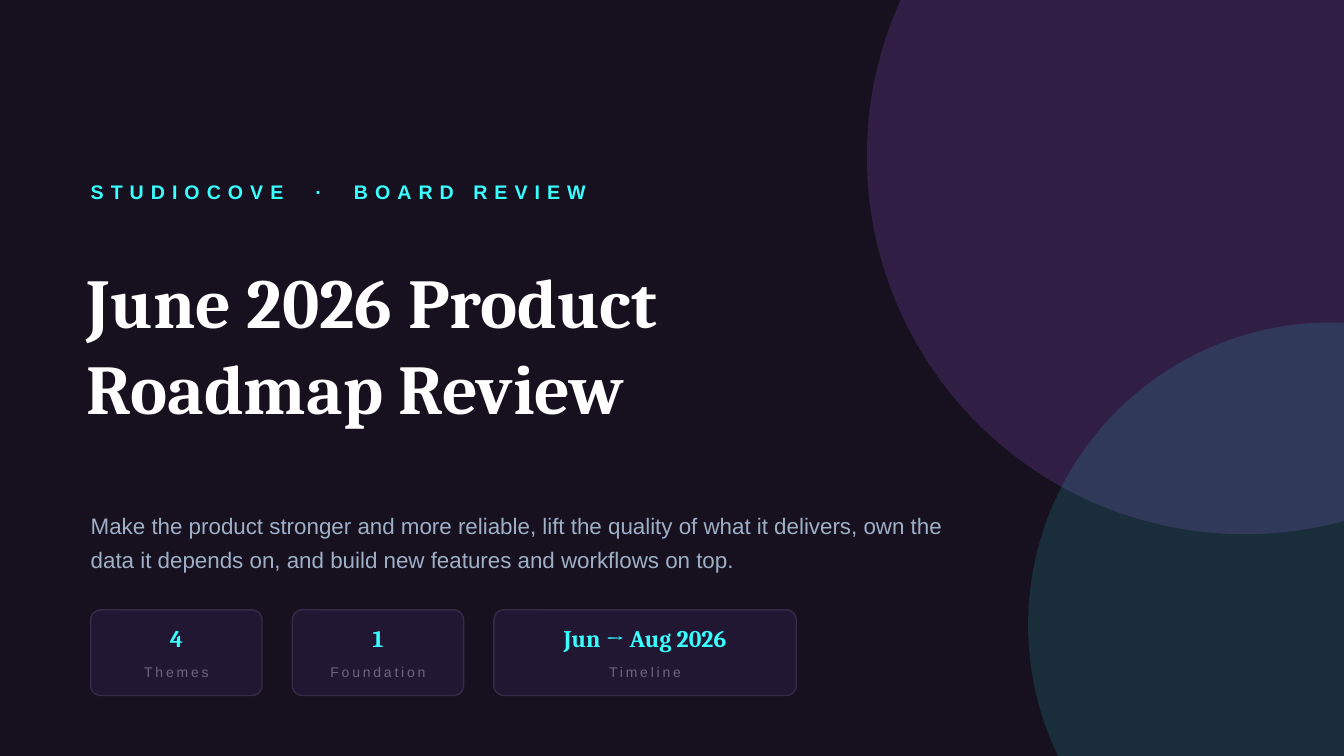
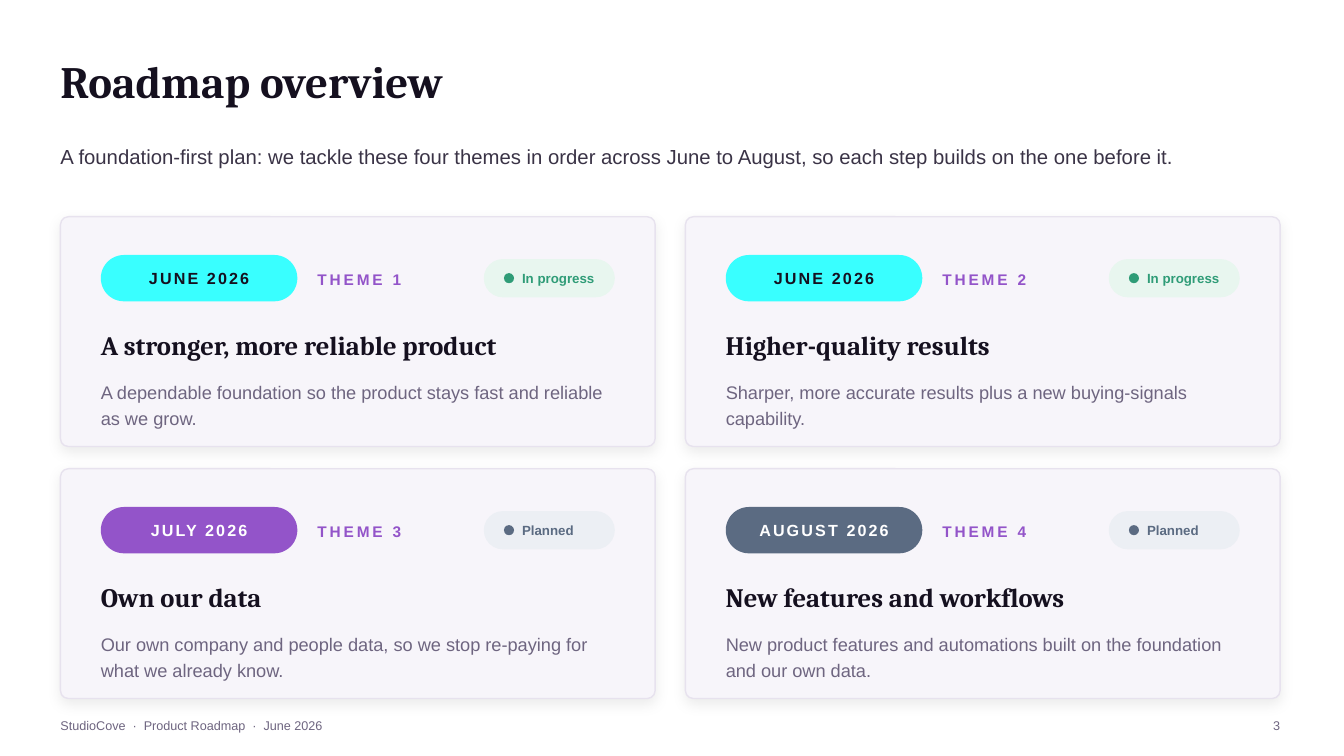
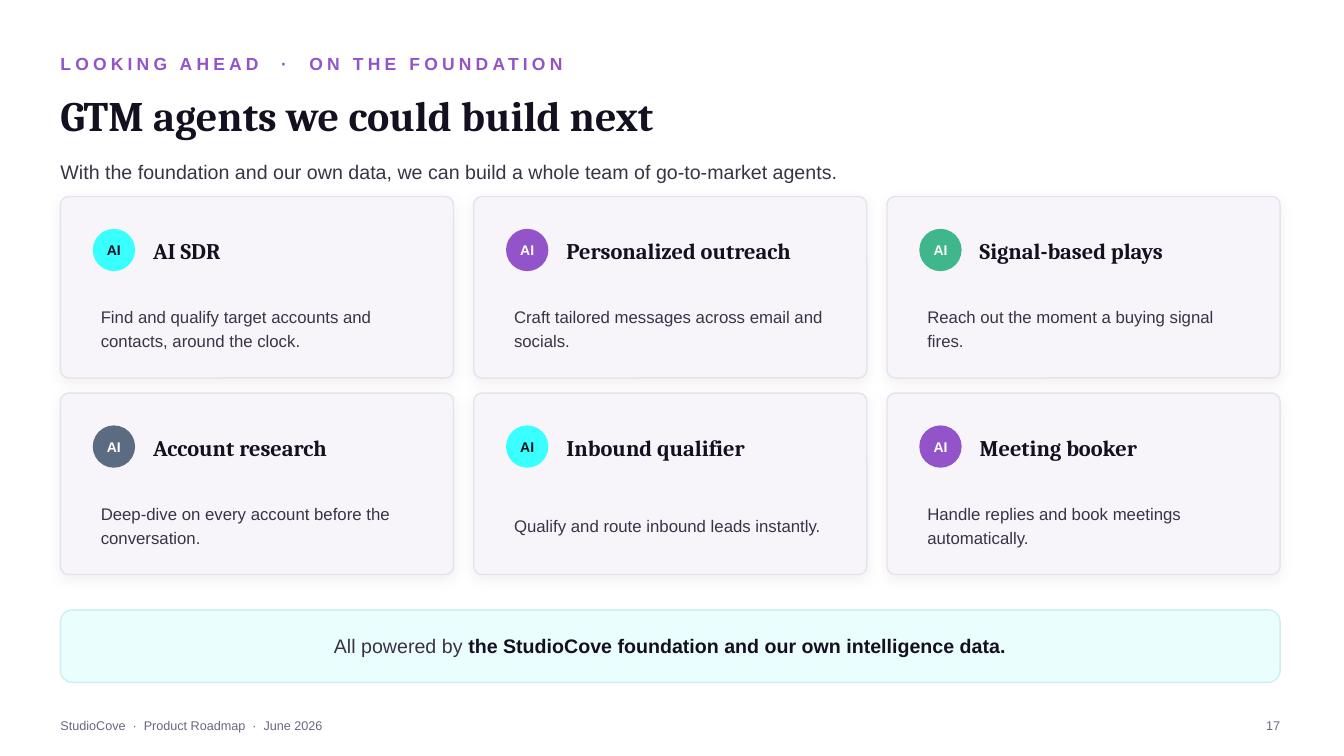
"""Build three slides of a product roadmap review."""
from dataclasses import dataclass, replace

from lxml.etree import SubElement
from pptx import Presentation
from pptx.dml.color import RGBColor
from pptx.enum.shapes import MSO_SHAPE as Preset
from pptx.enum.text import MSO_ANCHOR as Anchor, MSO_AUTO_SIZE as AutoSize, PP_ALIGN as Align
from pptx.oxml.ns import qn
from pptx.util import Pt

NIGHT = RGBColor(0x16, 0x10, 0x1F)
INK = RGBColor(0x15, 0x10, 0x1F)
TEXT = RGBColor(0x3A, 0x33, 0x46)
MUTED = RGBColor(0x6E, 0x65, 0x80)
WHITE = RGBColor(0xFF, 0xFF, 0xFF)
CYAN = RGBColor(0x39, 0xFF, 0xFF)
PURPLE = RGBColor(0x93, 0x54, 0xC9)
SLATE = RGBColor(0x5B, 0x6B, 0x82)
GREEN = RGBColor(0x3F, 0xB6, 0x8B)
DEEP_GREEN = RGBColor(0x2F, 0x9C, 0x77)
PALE_GREEN = RGBColor(0xE8, 0xF6, 0xEF)
PALE_SLATE = RGBColor(0xEC, 0xEF, 0xF4)
MIST = RGBColor(0x9F, 0xB0, 0xC6)
CARD = RGBColor(0xF7, 0xF5, 0xFA)
CARD_EDGE = RGBColor(0xE7, 0xE2, 0xEE)
DARK_CARD = RGBColor(0x21, 0x17, 0x33)
DARK_EDGE = RGBColor(0x35, 0x2A, 0x48)
BANNER = RGBColor(0xEA, 0xFE, 0xFE)
BANNER_EDGE = RGBColor(0xCD, 0xEF, 0xEF)

MARGIN = 43.2
CONTENT_WIDTH = 871.2
COVER_LEFT = 64.8


@dataclass(frozen=True)
class Style:
    """Look of a paragraph."""
    size: float
    color: RGBColor
    font: str = "Arial"
    bold: bool = False
    spacing: float = 0
    align: Align = Align.LEFT
    line: float = 1.0


HEADING = Style(32, INK, "Cambria", True)
FOOTER_STYLE = Style(9, MUTED)
FOOTER = ("StudioCove", "Product Roadmap", "June 2026")

COVER_EYEBROW = ("STUDIOCOVE", "BOARD REVIEW")
COVER_TITLE = ("June 2026 Product", "Roadmap Review")
COVER_SUMMARY = ("Make the product stronger and more reliable, lift the quality of what it delivers, "
                 "own the data it depends on, and build new features and workflows on top.")
COVER_CIRCLES = [((619.2, -158.4, 540, 540), PURPLE, 22), ((734.4, 230.4, 432, 432), CYAN, 12)]
COVER_FACTS = [("4", "Themes", 122.4), ("1", "Foundation", 122.4),
               ("Jun → Aug 2026", "Timeline", 216)]

OVERVIEW_LEAD = ("A foundation-first plan: we tackle these four themes in order across June to August, "
                 "so each step builds on the one before it.")
IN_PROGRESS = ("In progress", DEEP_GREEN, PALE_GREEN)
PLANNED = ("Planned", SLATE, PALE_SLATE)
THEMES = [
    ("JUNE 2026", CYAN, IN_PROGRESS, "A stronger, more reliable product",
     "A dependable foundation so the product stays fast and reliable as we grow."),
    ("JUNE 2026", CYAN, IN_PROGRESS, "Higher-quality results",
     "Sharper, more accurate results plus a new buying-signals capability."),
    ("JULY 2026", PURPLE, PLANNED, "Own our data",
     "Our own company and people data, so we stop re-paying for what we already know."),
    ("AUGUST 2026", SLATE, PLANNED, "New features and workflows",
     "New product features and automations built on the foundation and our own data."),
]

AGENTS_EYEBROW = ("LOOKING AHEAD", "ON THE FOUNDATION")
AGENTS_LEAD = "With the foundation and our own data, we can build a whole team of go-to-market agents."
AGENTS = [
    ("AI SDR", CYAN, "Find and qualify target accounts and contacts, around the clock."),
    ("Personalized outreach", PURPLE, "Craft tailored messages across email and socials."),
    ("Signal-based plays", GREEN, "Reach out the moment a buying signal fires."),
    ("Account research", SLATE, "Deep-dive on every account before the conversation."),
    ("Inbound qualifier", CYAN, "Qualify and route inbound leads instantly."),
    ("Meeting booker", PURPLE, "Handle replies and book meetings automatically."),
]
BANNER_TEXT = ("All powered by ", "the StudioCove foundation and our own intelligence data.")


def paint(font, style):
    font.size = Pt(style.size)
    font.name = style.font
    font.bold = style.bold
    font.color.rgb = style.color
    if style.spacing:
        font._rPr.set("spc", str(round(style.spacing * 100)))


def write(shape, lines, style, inset=0):
    """Fill a shape; each line is a string or a list of (text, style) runs."""
    frame = shape.text_frame
    frame.word_wrap = True
    frame.auto_size = AutoSize.NONE
    frame.vertical_anchor = Anchor.MIDDLE
    frame.margin_left = Pt(inset)
    frame.margin_top = frame.margin_right = frame.margin_bottom = 0
    for index, line in enumerate(lines):
        paragraph = frame.add_paragraph() if index else frame.paragraphs[0]
        paragraph.alignment = style.align
        paragraph.line_spacing = style.line
        paragraph.space_before = Pt(0)
        if isinstance(line, str):
            paragraph.text = line
            paint(paragraph.font, style)
            continue
        for text, run_style in line:
            run = paragraph.add_run()
            run.text = text
            paint(run.font, run_style)


def place(shape, box):
    shape.left, shape.top, shape.width, shape.height = map(Pt, box)


def add_text(slide, box, line, style):
    write(slide.shapes.add_textbox(*map(Pt, box)), [line], style)


def fill_placeholder(shape, box, lines, style):
    place(shape, box)
    write(shape, lines, style)


def dotted(parts, style):
    """Join parts with a dot that has wide gaps around it."""
    gap = replace(style, spacing=2 * style.spacing + 0.28 * style.size)
    runs = [(parts[0], style)]
    for part in parts[1:]:
        runs += [(" ", gap), ("·", style), (" ", gap), (part, style)]
    return runs


def add_shape(slide, preset, box, fill, edge=None, corner=None, alpha=None, shadow=None):
    shape = slide.shapes.add_shape(preset, *map(Pt, box))
    shape.shadow.inherit = False
    shape.fill.solid()
    shape.fill.fore_color.rgb = fill
    properties = shape._element.spPr
    if alpha:
        color = properties.find(".//" + qn("a:srgbClr"))
        SubElement(color, qn("a:alpha"), val=str(alpha * 1000))
    if edge:
        shape.line.color.rgb = edge
        shape.line.width = Pt(1)
    else:
        shape.line.fill.background()
    if corner:
        shape.adjustments[0] = corner
    if shadow:
        outer = SubElement(properties.find(qn("a:effectLst")), qn("a:outerShdw"),
                           blurRad=str(Pt(10)), dist=str(Pt(3)), dir="5400000",
                           algn="bl", rotWithShape="0")
        color = SubElement(outer, qn("a:srgbClr"), val="000000")
        SubElement(color, qn("a:alpha"), val=str(shadow * 1000))
    return shape


def grid(count, columns, top, width, height, gap_x, gap_y):
    for index in range(count):
        row, column = divmod(index, columns)
        yield MARGIN + column * (width + gap_x), top + row * (height + gap_y), width, height


def on_color(fill):
    return INK if fill == CYAN else WHITE


def add_content_slide(presentation, title, title_box, title_size, number):
    slide = presentation.slides.add_slide(presentation.slide_layouts[5])
    fill_placeholder(slide.shapes.title, title_box, [title], replace(HEADING, size=title_size))
    add_text(slide, (MARGIN, 507.6, 576, 21.6), dotted(FOOTER, FOOTER_STYLE), FOOTER_STYLE)
    add_text(slide, (885.6, 507.6, 28.8, 21.6), number, replace(FOOTER_STYLE, align=Align.RIGHT))
    return slide


def build_cover(presentation):
    slide = presentation.slides.add_slide(presentation.slide_layouts[0])
    slide.background.fill.solid()
    slide.background.fill.fore_color.rgb = NIGHT
    for box, color, alpha in COVER_CIRCLES:
        add_shape(slide, Preset.OVAL, box, color, alpha=alpha)
    eyebrow = Style(14, CYAN, bold=True, spacing=5)
    add_text(slide, (COVER_LEFT, 122.4, 648, 28.8), dotted(COVER_EYEBROW, eyebrow), eyebrow)
    fill_placeholder(slide.shapes.title, (61.92, 169.2, 756, 151.2), COVER_TITLE,
                     Style(50, WHITE, "Cambria", True, line=1.02))
    fill_placeholder(slide.placeholders[1], (COVER_LEFT, 349.2, 619.2, 72), [COVER_SUMMARY],
                     Style(16, MIST, line=1.25))
    left, top = COVER_LEFT, 435.6
    for value, label, width in COVER_FACTS:
        add_shape(slide, Preset.ROUNDED_RECTANGLE, (left, top, width, 61.2), DARK_CARD,
                  DARK_EDGE, 0.118)
        add_text(slide, (left, top + 5.76, width, 28.8), value,
                 Style(17, CYAN, "Cambria", True, align=Align.CENTER))
        add_text(slide, (left, top + 33.84, width, 21.6), label,
                 Style(10, MUTED, spacing=2, align=Align.CENTER))
        left += width + 21.6


def build_overview(presentation):
    slide = add_content_slide(presentation, "Roadmap overview", (MARGIN, 36, 792, 43.2), 32, "3")
    add_text(slide, (MARGIN, 84.96, CONTENT_WIDTH, 50.4), OVERVIEW_LEAD, Style(14.5, TEXT, line=1.2))
    cards = grid(len(THEMES), 2, 154.8, 424.8, 164.16, 21.6, 15.84)
    for number, (card, theme) in enumerate(zip(cards, THEMES), 1):
        month, color, (status, status_color, status_fill), heading, body = theme
        left, top = card[:2]
        inner = left + 28.8
        add_shape(slide, Preset.ROUNDED_RECTANGLE, card, CARD, CARD_EDGE, 0.035, shadow=8)
        pill = add_shape(slide, Preset.ROUNDED_RECTANGLE, (inner, top + 27.36, 140.4, 33.12),
                         color, corner=0.5)
        write(pill, [month], Style(11.5, on_color(color), bold=True, spacing=1.5,
                                   align=Align.CENTER))
        add_text(slide, (left + 183.6, top + 33.12, 100.8, 23.04), f"THEME {number}",
                 Style(11, PURPLE, bold=True, spacing=2))
        badge = add_shape(slide, Preset.ROUNDED_RECTANGLE,
                          (left + 302.4, top + 30.24, 93.6, 27.36), status_fill, corner=0.5)
        write(badge, [status], Style(9.5, status_color, bold=True), inset=23.35)
        add_shape(slide, Preset.OVAL, (left + 316.8, top + 40.32, 7.2, 7.2), status_color)
        add_text(slide, (inner, top + 73.44, 367.2, 36), heading, replace(HEADING, size=19))
        add_text(slide, (inner, top + 111.6, 370.8, 43.2), body, Style(13, MUTED, line=1.2))


def build_agents(presentation):
    slide = add_content_slide(presentation, "GTM agents we could build next",
                              (MARGIN, 60.48, CONTENT_WIDTH, 43.2), 30, "17")
    eyebrow = Style(12.5, PURPLE, bold=True, spacing=3)
    add_text(slide, (MARGIN, 33.12, 792, 25.2), dotted(AGENTS_EYEBROW, eyebrow), eyebrow)
    add_text(slide, (MARGIN, 108, CONTENT_WIDTH, 28.8), AGENTS_LEAD, Style(14, TEXT))
    cards = grid(len(AGENTS), 3, 140.4, 280.8, 129.6, 14.4, 10.8)
    for card, (name, color, description) in zip(cards, AGENTS):
        left, top = card[:2]
        add_shape(slide, Preset.ROUNDED_RECTANGLE, card, CARD, CARD_EDGE, 0.044, shadow=6)
        badge = add_shape(slide, Preset.OVAL, (left + 23.04, top + 23.04, 30.24, 30.24), color)
        write(badge, ["AI"], Style(10, on_color(color), bold=True, align=Align.CENTER))
        add_text(slide, (left + 66.24, top + 24.48, 194.4, 28.8), name, replace(HEADING, size=16))
        add_text(slide, (left + 28.8, top + 66.24, 230.4, 54), description,
                 Style(12, TEXT, line=1.18))
    banner = add_shape(slide, Preset.ROUNDED_RECTANGLE, (MARGIN, 435.6, CONTENT_WIDTH, 51.84),
                       BANNER, BANNER_EDGE, 0.167)
    plain = Style(14, TEXT, align=Align.CENTER)
    strong = replace(plain, color=INK, bold=True)
    write(banner, [list(zip(BANNER_TEXT, (plain, strong)))], plain)


def main():
    presentation = Presentation()
    presentation.slide_width, presentation.slide_height = Pt(960), Pt(540)
    build_cover(presentation)
    build_overview(presentation)
    build_agents(presentation)
    presentation.save("out.pptx")


if __name__ == "__main__":
    main()
